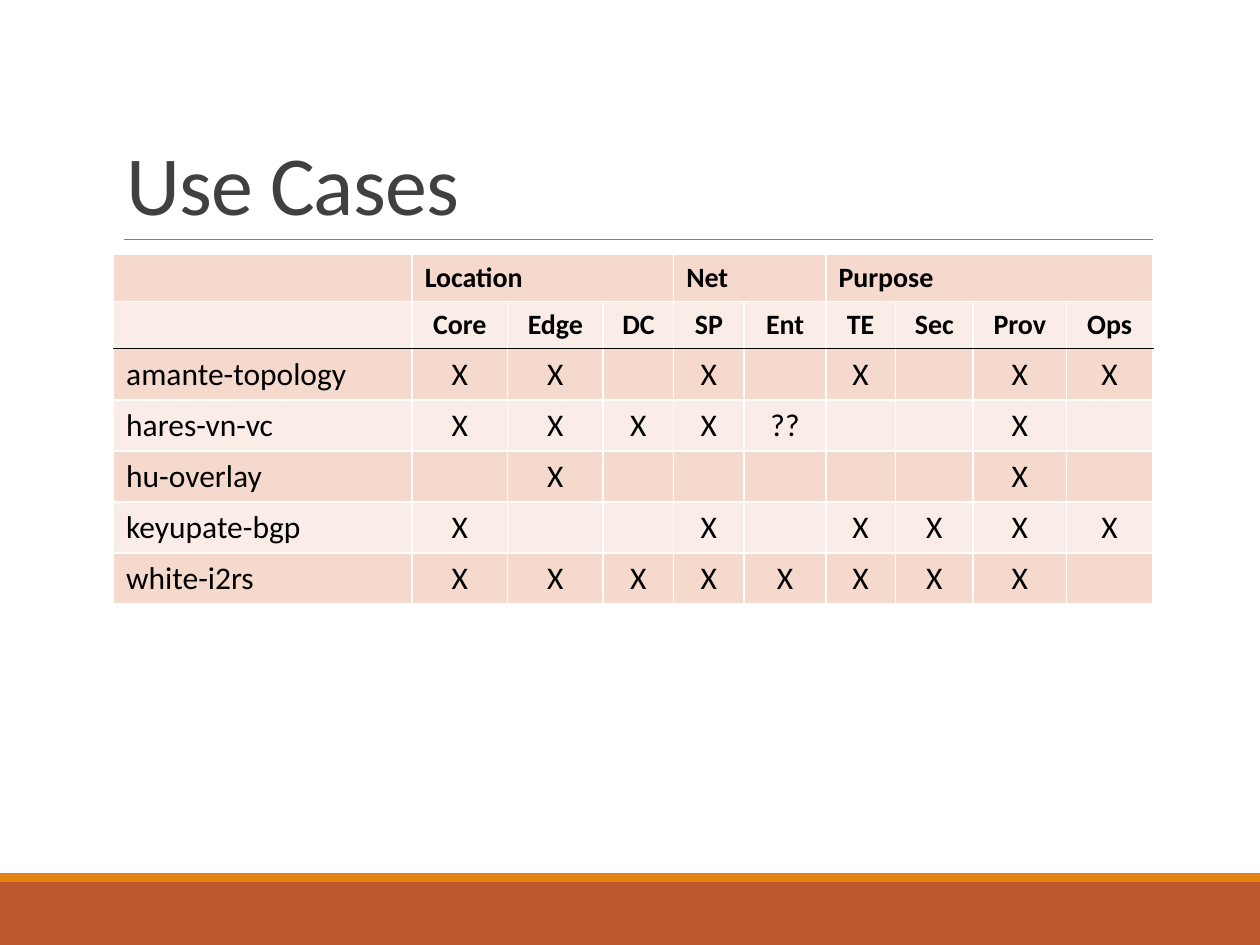
from lxml.etree import SubElement
from pptx import Presentation
from pptx.dml.color import RGBColor
from pptx.enum.shapes import MSO_CONNECTOR, MSO_SHAPE
from pptx.enum.text import MSO_ANCHOR, MSO_AUTO_SIZE, PP_ALIGN
from pptx.oxml.ns import qn
from pptx.util import Cm, Pt

COLORS = {
    "footer": "BD582C",
    "stripe": "E48312",
    "rule": "808080",
    "title": "404040",
    "text": "000000",
    "band_dark": "F5D9CC",
    "band_light": "FAEDE7",
    "border": "FFFFFF",
}
FONT = "Calibri"
COLUMN_WIDTHS = [6.02, 1.92, 1.93, 1.42, 1.42, 1.65, 1.4, 1.57, 1.88, 1.74]
HEADER_ROWS = 2
HEADER_HEIGHT = 0.95
BODY_HEIGHT = 1.03
GROUPS = [("Location", 1, 3), ("Net", 4, 5), ("Purpose", 6, 9)]
ROWS = [
    ["", "Core", "Edge", "DC", "SP", "Ent", "TE", "Sec", "Prov", "Ops"],
    ["amante-topology", "X", "X", "", "X", "", "X", "", "X", "X"],
    ["hares-vn-vc", "X", "X", "X", "X", "??", "", "", "X", ""],
    ["hu-overlay", "", "X", "", "", "", "", "", "X", ""],
    ["keyupate-bgp", "X", "", "", "X", "", "X", "X", "X", "X"],
    ["white-i2rs", "X", "X", "X", "X", "X", "X", "X", "X", ""],
]


def color(name):
    return RGBColor.from_string(COLORS[name])


def add_bar(slide, top, height, fill):
    bar = slide.shapes.add_shape(MSO_SHAPE.RECTANGLE, 0, Cm(top), Cm(25.4), Cm(height))
    bar.shadow.inherit = False
    bar.fill.solid()
    bar.fill.fore_color.rgb = color(fill)
    bar.line.fill.background()


def add_rule(slide, left, right, top):
    rule = slide.shapes.add_connector(
        MSO_CONNECTOR.STRAIGHT, Cm(left), Cm(top), Cm(right), Cm(top)
    )
    rule.line.color.rgb = color("rule")
    rule.line.width = Pt(0.5)
    SubElement(rule._element.spPr, qn("a:effectLst"))


def format_run(run, size, color_name, bold=False):
    run.font.name = FONT
    run.font.size = Pt(size)
    run.font.bold = bold
    run.font.color.rgb = color(color_name)


def set_title(slide, text):
    title = slide.shapes.title
    title.left, title.top, title.width, title.height = Cm(2.29), Cm(0.8), Cm(20.95), Cm(4.02)
    frame = title.text_frame
    frame.text = text
    frame.auto_size = MSO_AUTO_SIZE.NONE
    frame.vertical_anchor = MSO_ANCHOR.BOTTOM
    paragraph = frame.paragraphs[0]
    paragraph.alignment = PP_ALIGN.LEFT
    paragraph.line_spacing = 0.85
    run = paragraph.runs[0]
    format_run(run, 48, "title")
    run.font._element.set("spc", "-50")


def set_borders(cell, top, bottom):
    properties = cell._tc.get_or_add_tcPr()
    sides = {"lnL": "border", "lnR": "border", "lnT": top, "lnB": bottom}
    for side, name in sides.items():
        line = SubElement(properties, qn(f"a:{side}"), w=str(Pt(1)))
        fill = SubElement(line, qn("a:solidFill"))
        SubElement(fill, qn("a:srgbClr"), val=COLORS[name])


def format_cell(cell, row, column):
    is_header = row < HEADER_ROWS
    set_borders(
        cell,
        "text" if row == HEADER_ROWS else "border",
        "text" if row == HEADER_ROWS - 1 else "border",
    )
    cell.fill.solid()
    cell.fill.fore_color.rgb = color("band_light" if row % 2 else "band_dark")
    cell.vertical_anchor = MSO_ANCHOR.TOP if is_header or column == 0 else MSO_ANCHOR.MIDDLE
    paragraph = cell.text_frame.paragraphs[0]
    paragraph.alignment = PP_ALIGN.CENTER if row and column else PP_ALIGN.LEFT
    size = 16 if is_header else 18
    for run in paragraph.runs:
        format_run(run, size, "text", is_header)
    if not paragraph.runs:
        SubElement(paragraph._p, qn("a:endParaRPr"), sz=str(size * 100))


def add_use_case_table(slide):
    row_count = len(ROWS) + 1
    heights = [HEADER_HEIGHT] * HEADER_ROWS + [BODY_HEIGHT] * (row_count - HEADER_ROWS)
    table = slide.shapes.add_table(
        row_count, len(COLUMN_WIDTHS), Cm(2.29), Cm(5.13),
        Cm(sum(COLUMN_WIDTHS)), Cm(sum(heights)),
    ).table
    for table_column, width in zip(table.columns, COLUMN_WIDTHS):
        table_column.width = Cm(width)
    for table_row, height in zip(table.rows, heights):
        table_row.height = Cm(height)
    for text, first, last in GROUPS:
        table.cell(0, first).merge(table.cell(0, last))
        table.cell(0, first).text_frame.text = text
    for row, values in enumerate(ROWS, start=1):
        for column, value in enumerate(values):
            table.cell(row, column).text_frame.text = value
    for row in range(row_count):
        for column in range(len(COLUMN_WIDTHS)):
            format_cell(table.cell(row, column), row, column)


def main():
    presentation = Presentation()
    presentation.slide_width = Cm(25.4)
    presentation.slide_height = Cm(19.05)
    slide = presentation.slides.add_slide(presentation.slide_layouts[5])
    add_bar(slide, 17.78, 1.27, "footer")
    add_bar(slide, 17.6, 0.18, "stripe")
    add_rule(slide, 2.49, 23.24, 4.83)
    set_title(slide, "Use Cases")
    add_use_case_table(slide)
    presentation.save("out.pptx")


if __name__ == "__main__":
    main()
